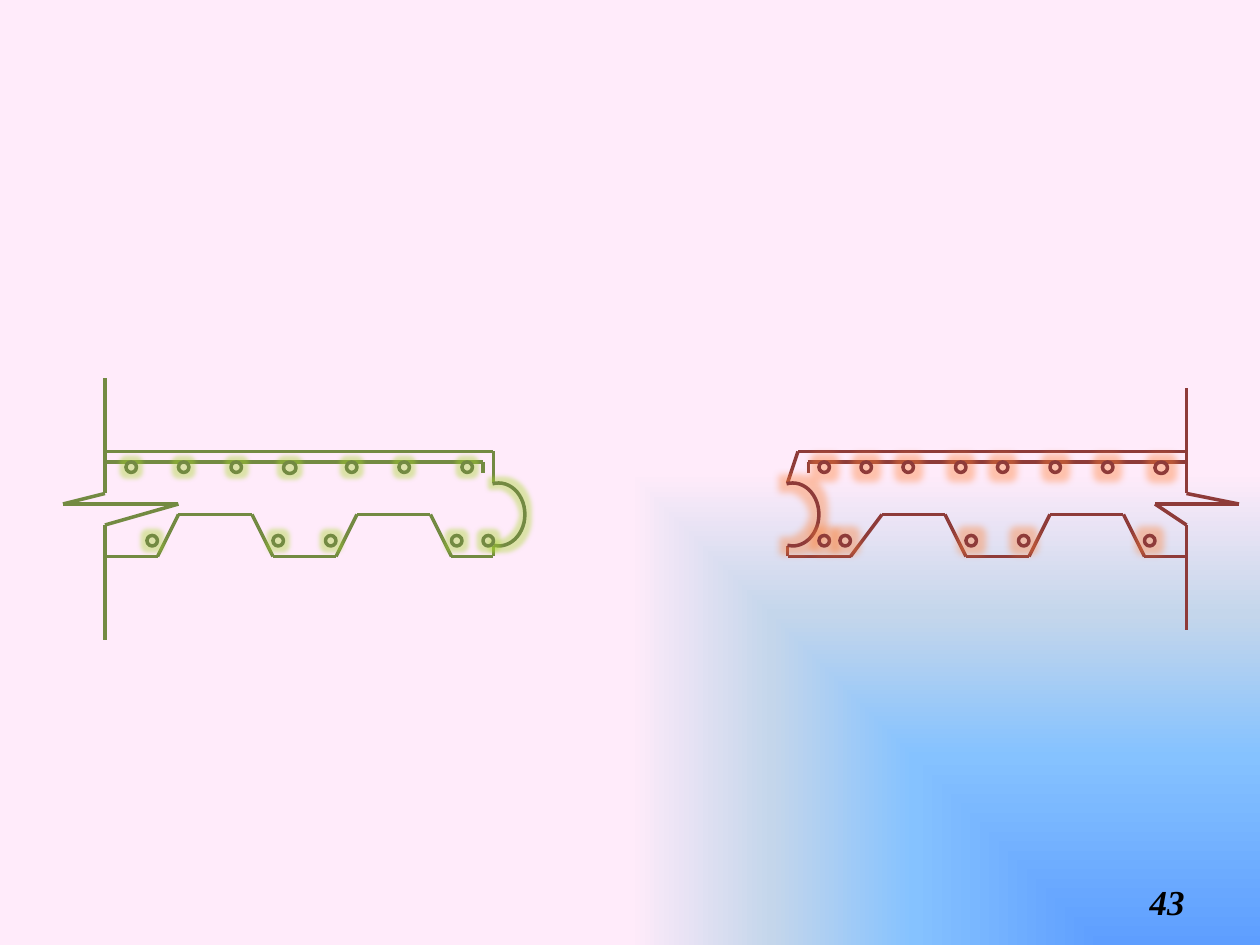
from itertools import pairwise

from lxml import etree
from pptx import Presentation
from pptx.dml.color import RGBColor
from pptx.enum.shapes import MSO_CONNECTOR, MSO_SHAPE
from pptx.enum.text import MSO_ANCHOR, PP_ALIGN
from pptx.oxml.ns import qn
from pptx.util import Cm, Pt

LINE, ARC, OVAL = MSO_CONNECTOR.STRAIGHT, MSO_SHAPE.ARC, MSO_SHAPE.OVAL
RIGHT, MIDDLE = PP_ALIGN.RIGHT, MSO_ANCHOR.MIDDLE

GREEN = RGBColor(0x73, 0x8A, 0x42)
LIME = RGBColor(0xA8, 0xD6, 0x2E)
RED = RGBColor(0x8E, 0x3B, 0x39)
AMBER = RGBColor(0xFF, 0x82, 0x37)
BLACK = RGBColor(0, 0, 0)
SKY = {0: RGBColor(0x5E, 0x9E, 0xFF), 40: RGBColor(0x85, 0xC2, 0xFF),
       70: RGBColor(0xC4, 0xD6, 0xEB), 100: RGBColor(0xFF, 0xEB, 0xFA)}

GRID = 2.54 / 12  # all parts sit on a grid of this many centimetres
TOP_ROW, LOW_ROW = 8, 15  # heights of the two rows of bars

# Both panels: points and bars in grid steps from the panel's corner
LEFT = {
    "box": (6, 36), "ink": GREEN, "glow": LIME, "reach": 5,
    "lines": [
        [(4, 7), (41, 7), (41, 10)],  # top face and edge
        [(4, 17), (9, 17), (11, 13), (18, 13), (20, 17), (26, 17),
         (28, 13), (35, 13), (37, 17), (41, 17), (41, 16)],  # ribbed soffit
        [(4, 8), (40, 8), (40, 9)],  # mesh wire
        [(4, 0), (4, 11), (0, 12), (11, 12), (4, 14), (4, 25)],  # break line
    ],
    "key": 39, "top": [6, 11, 16, 27, 32, 38], "big": 21,
    "low": [8, 20, 25, 37, 40],
}
OTHER = {
    "box": (73, 36), "ink": RED, "glow": AMBER, "reach": 8,
    "lines": [
        [(40, 7), (3, 7), (2, 10)],
        [(2, 16), (2, 17), (8, 17), (11, 13), (17, 13), (19, 17), (25, 17),
         (27, 13), (34, 13), (36, 17), (40, 17)],
        [(40, 8), (4, 8), (4, 9)],
        [(40, 1), (40, 11), (45, 12), (37, 12), (40, 14), (40, 24)],
    ],
    "key": 0, "top": [5, 9, 13, 18, 22, 27, 32], "big": 37,
    "low": [5, 7, 19, 24, 36],
}


def step(num):
    return Cm(num * GRID)


def format_all(item, values):
    for name, value in values.items():
        setattr(item, name, value)


def ink_line(line, ink):
    line.color.rgb = ink
    line.width = Pt(2)


def backdrop(slide):
    slide.background.fill.gradient()
    grad = slide.element.find(".//" + qn("a:gradFill"))
    for child in list(grad):
        grad.remove(child)
    stops = etree.SubElement(grad, qn("a:gsLst"))
    for place, tint in SKY.items():
        stop = etree.SubElement(stops, qn("a:gs"), pos=str(place * 1000))
        etree.SubElement(stop, qn("a:srgbClr"), val=str(tint))
    path = etree.SubElement(grad, qn("a:path"))
    path.set("path", "rect")
    etree.SubElement(path, qn("a:fillToRect"), l="100000", t="100000")


def add_line(slide, start, end, ink):
    line = slide.shapes.add_connector(LINE, *map(step, (*start, *end)))
    ink_line(line.line, ink)
    etree.SubElement(line.element.spPr, qn("a:effectLst"))


def add_round(slide, kind, box, part):
    shape = slide.shapes.add_shape(kind, *map(step, box))
    shape.fill.background()
    ink_line(shape.line, part["ink"])
    shape.shadow.inherit = False
    # Soft glow around the outline
    effects = shape.element.spPr.find(qn("a:effectLst"))
    glow = etree.SubElement(effects, qn("a:glow"),
                            rad=str(Pt(part["reach"])))
    tint = etree.SubElement(glow, qn("a:srgbClr"), val=str(part["glow"]))
    etree.SubElement(tint, qn("a:alpha"), val="40000")
    return shape


def panel(slide, part):
    left, top = part["box"]
    # Outline, mesh and break line
    for points in part["lines"]:
        spots = [(left + x, top + y) for x, y in points]
        for start, end in pairwise(spots):
            add_line(slide, start, end, part["ink"])
    # Round joint at the panel's edge
    arc = add_round(slide, ARC, (left + part["key"], top + 10, 5, 6), part)
    arc.adjustments[0], arc.adjustments[1] = 155.23, 59.84
    # Bars in section
    for row, name in ((TOP_ROW, "top"), (LOW_ROW, "low")):
        for x in part[name]:
            add_round(slide, OVAL, (left + x, top + row, 1, 1), part)
    big = (left + part["big"], top + TOP_ROW, 1.2, 1.1)
    add_round(slide, OVAL, big, part)


def page_mark(slide, box):
    frame = slide.shapes.add_textbox(*map(Cm, box)).text_frame
    format_all(frame, {"word_wrap": True, "vertical_anchor": MIDDLE})
    para = frame.paragraphs[0]
    format_all(para, {"text": "43", "alignment": RIGHT})
    font = para.runs[0].font
    format_all(font, {"name": "Times New Roman", "size": Pt(20),
                      "bold": True, "italic": True})
    font.color.rgb = BLACK


def main():
    deck = Presentation()
    format_all(deck, {"slide_width": Cm(25.4), "slide_height": Cm(19.05)})
    slide = deck.slides.add_slide(deck.slide_layouts[6])
    backdrop(slide)
    for part in (LEFT, OTHER):
        panel(slide, part)
    page_mark(slide, (18.2, 17.66, 5.93, 1.01))
    deck.save("out.pptx")


if __name__ == "__main__":
    main()
